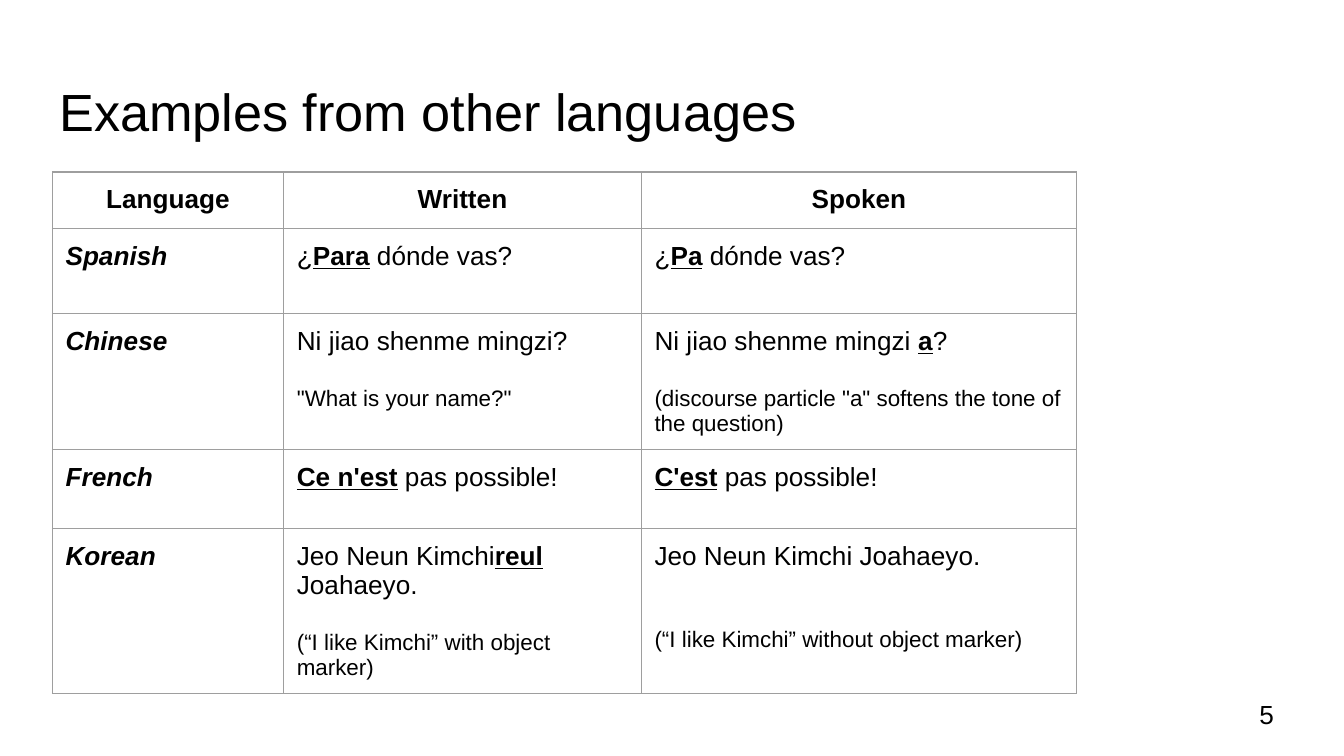
from lxml import etree
from pptx import Presentation
from pptx.dml.color import RGBColor
from pptx.enum.text import MSO_ANCHOR, MSO_AUTO_SIZE, PP_ALIGN
from pptx.oxml.ns import qn
from pptx.util import Cm, Pt

TOP, MIDDLE = MSO_ANCHOR.TOP, MSO_ANCHOR.MIDDLE
NO_AUTOFIT = MSO_AUTO_SIZE.NONE
LEFT, CENTER = PP_ALIGN.LEFT, PP_ALIGN.CENTER

BLACK = RGBColor(0x00, 0x00, 0x00)
GRID_GRAY = RGBColor(0x9E, 0x9E, 0x9E)

FONT = "Arial"
EXAMPLE_SIZE = 14
NOTE_SIZE = 12
INSET = Cm(0.25)
GAP = 16
WIDE_GAP = 30

TITLE_ONLY_LAYOUT = 5
COLUMN_WIDTHS = [4.37, 6.76, 8.23]
ROW_HEIGHTS = [1.07, 1.61, 2.57, 1.49, 3.12]

HEADINGS = ["Language", "Written", "Spoken"]
EXAMPLES = [
    ("Spanish", ("¿*Para* dónde vas?",), ("¿*Pa* dónde vas?",)),
    (
        "Chinese",
        ("Ni jiao shenme mingzi?", '"What is your name?"', GAP),
        (
            "Ni jiao shenme mingzi *a*?",
            '(discourse particle "a" softens the tone of the question)',
            GAP,
        ),
    ),
    ("French", ("*Ce n'est* pas possible!",), ("*C'est* pas possible!",)),
    (
        "Korean",
        (
            "Jeo Neun Kimchi*reul* Joahaeyo.",
            "(“I like Kimchi” with object marker)",
            GAP,
        ),
        (
            "Jeo Neun Kimchi Joahaeyo.",
            "(“I like Kimchi” without object marker)",
            WIDE_GAP,
        ),
    ),
]


def write_paragraph(paragraph, text, size, align=LEFT, bold=False, italic=False):
    paragraph.alignment = align
    font = paragraph.font
    font.name, font.size = FONT, Pt(size)
    font.bold, font.italic = bold, italic
    font.color.rgb = BLACK
    for position, part in enumerate(text.split("*")):
        if part:
            run = paragraph.add_run()
            run.text = part
            if position % 2:
                run.font.bold = run.font.underline = True


def set_insets(holder):
    holder.margin_left = holder.margin_right = INSET
    holder.margin_top = holder.margin_bottom = INSET


def place_text(box, bounds, text, size, anchor):
    box.left, box.top, box.width, box.height = (Cm(length) for length in bounds)
    frame = box.text_frame
    frame.word_wrap = True
    frame.auto_size = NO_AUTOFIT
    frame.vertical_anchor = anchor
    set_insets(frame)
    write_paragraph(frame.paragraphs[0], text, size)


def outline_cell(cell):
    properties = cell._tc.get_or_add_tcPr()
    for position, side in enumerate(("a:lnL", "a:lnR", "a:lnT", "a:lnB")):
        line = etree.Element(qn(side), w=str(Pt(0.75)))
        fill = etree.SubElement(line, qn("a:solidFill"))
        etree.SubElement(fill, qn("a:srgbClr"), val=str(GRID_GRAY))
        properties.insert(position, line)


def write_example(cell, example, note=None, gap=0):
    frame = cell.text_frame
    write_paragraph(frame.paragraphs[0], example, EXAMPLE_SIZE)
    if note:
        paragraph = frame.add_paragraph()
        paragraph.space_before = Pt(gap)
        write_paragraph(paragraph, note, NOTE_SIZE)


def add_language_table(slide):
    table = slide.shapes.add_table(
        len(ROW_HEIGHTS), len(COLUMN_WIDTHS), Cm(0.99), Cm(3.25),
        Cm(sum(COLUMN_WIDTHS)), Cm(sum(ROW_HEIGHTS)),
    ).table
    table.first_row = table.horz_banding = False
    for column, width in zip(table.columns, COLUMN_WIDTHS):
        column.width = Cm(width)
    for row, height in zip(table.rows, ROW_HEIGHTS):
        row.height = Cm(height)
    for cell in table.iter_cells():
        set_insets(cell)
        cell.fill.background()
        outline_cell(cell)

    for column, heading in enumerate(HEADINGS):
        paragraph = table.cell(0, column).text_frame.paragraphs[0]
        write_paragraph(paragraph, heading, EXAMPLE_SIZE, CENTER, bold=True)
    for row, (language, written, spoken) in enumerate(EXAMPLES, start=1):
        paragraph = table.cell(row, 0).text_frame.paragraphs[0]
        write_paragraph(paragraph, language, EXAMPLE_SIZE, bold=True, italic=True)
        write_example(table.cell(row, 1), *written)
        write_example(table.cell(row, 2), *spoken)


def main():
    presentation = Presentation()
    presentation.slide_width = Cm(25.4)
    presentation.slide_height = Cm(14.29)
    slide = presentation.slides.add_slide(
        presentation.slide_layouts[TITLE_ONLY_LAYOUT]
    )
    place_text(
        slide.shapes.title, (0.87, 1.24, 23.67, 1.6),
        "Examples from other languages", 28, TOP,
    )
    page_number = slide.shapes.add_textbox(0, 0, 0, 0)
    place_text(page_number, (23.55, 12.95, 1.52, 1.09), "5", 14, MIDDLE)
    add_language_table(slide)
    presentation.save("out.pptx")


if __name__ == "__main__":
    main()
